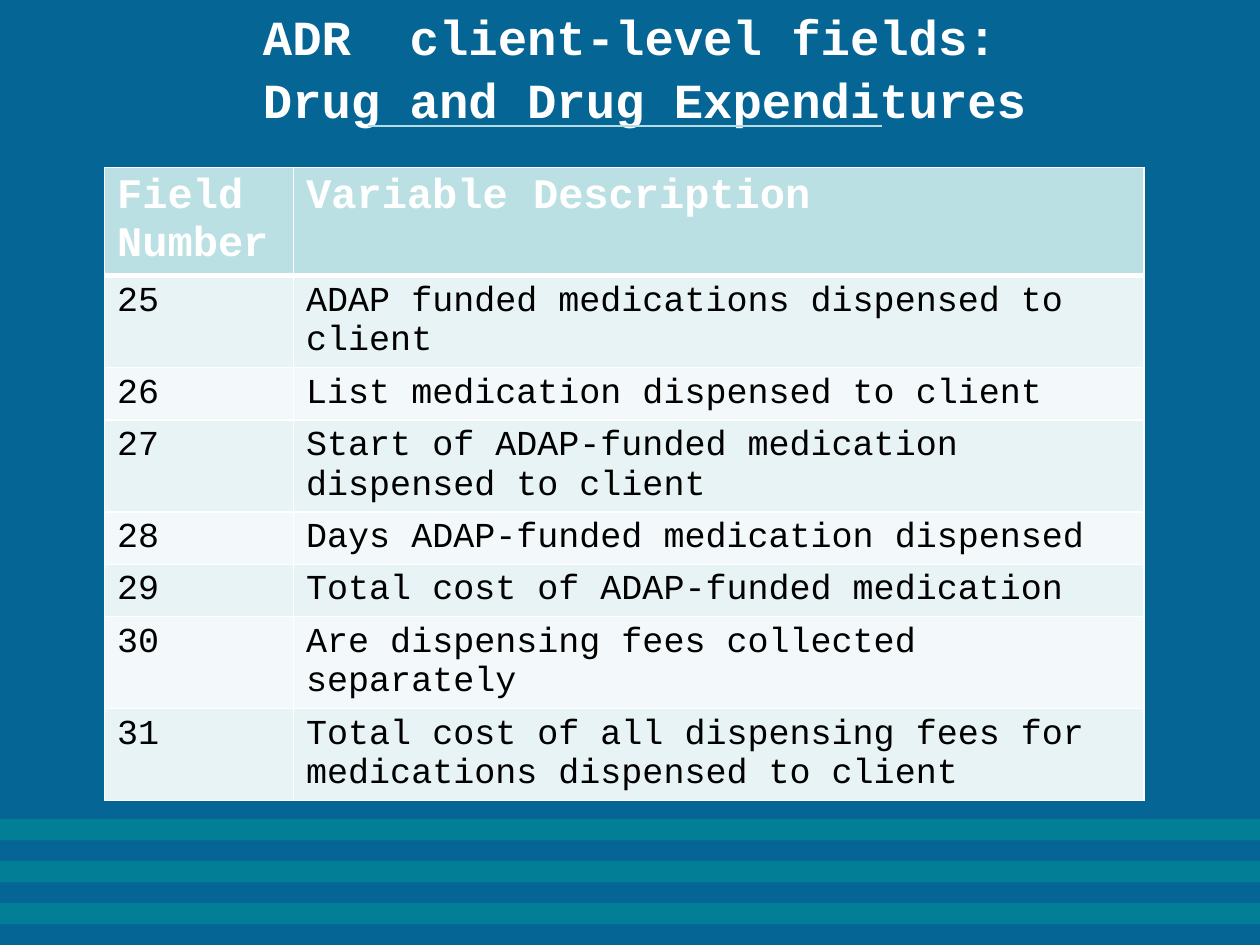
from dataclasses import dataclass

from lxml import etree
from pptx import Presentation
from pptx import util as u
from pptx.dml.color import RGBColor
from pptx.enum import shapes, text
from pptx.oxml import parse_xml
from pptx.oxml.ns import nsdecls, qn


@dataclass(frozen=True)
class Theme:
    font: str = "Courier New"
    background: str = "056594"
    stripe: str = "009999"
    stripe_alpha: int = 49000
    rule: str = "B6DCDF"
    white: str = "FFFFFF"
    black: str = "000000"
    header: str = "BBE0E3"
    bands: tuple = ("E7F3F4", "F3F9FA")
    title_size: int = 28
    header_size: int = 24
    body_size: int = 20


THEME = Theme()
TITLE = "ADR  client-level fields:\v Drug and Drug Expenditures"
HEADINGS = ("Field Number", "Variable Description")
FIRST_FIELD = 25
DESCRIPTIONS = (
    "ADAP funded medications dispensed to client",
    "List medication dispensed to client",
    "Start of ADAP-funded medication dispensed to client",
    "Days ADAP-funded medication dispensed",
    "Total cost of ADAP-funded medication",
    "Are dispensing fees collected separately",
    "Total cost of all dispensing fees for medications dispensed to client",
)


def box(left, top, width, height):
    return [u.Inches(length) for length in (left, top, width, height)]


def apply_format(target, values):
    for name, value in values.items():
        setattr(target, name, value)


def style_font(font, size, color, bold):
    apply_format(font, {"name": THEME.font, "size": u.Pt(size), "bold": bold})
    font.color.rgb = RGBColor.from_string(color)


def paint(fill, color):
    fill.solid()
    fill.fore_color.rgb = RGBColor.from_string(color)


def add_stripe(slide, top):
    stripe = slide.shapes.add_shape(
        shapes.MSO_SHAPE.RECTANGLE, *box(0, top, 10, 0.17))
    stripe.shadow.inherit = False
    stripe.line.fill.background()
    paint(stripe.fill, THEME.stripe)
    color = stripe.fill._xPr.find(".//" + qn("a:srgbClr"))
    etree.SubElement(color, qn("a:alpha"), val=str(THEME.stripe_alpha))


def set_title(slide):
    title = slide.shapes.title
    places = ("left", "top", "width", "height")
    apply_format(title, dict(zip(places, box(0.5, 0.17, 9, 0.7))))
    frame = title.text_frame
    frame.text = TITLE
    apply_format(frame, {
        "word_wrap": True,
        "auto_size": text.MSO_AUTO_SIZE.NONE,
        "vertical_anchor": text.MSO_ANCHOR.MIDDLE,
    })
    heading = frame.paragraphs[0]
    apply_format(heading, {"alignment": text.PP_ALIGN.CENTER, "line_spacing": 1.06})
    for run in heading.runs:
        style_font(run.font, THEME.title_size, THEME.white, True)


def add_rule(slide):
    rule = slide.shapes.add_connector(
        shapes.MSO_CONNECTOR.STRAIGHT, *box(7, 1, 2.92, 1))
    rule.line.color.rgb = RGBColor.from_string(THEME.rule)
    rule.line.width = u.Pt(0.75)
    etree.SubElement(rule._element.spPr, qn("a:effectLst"))


def set_borders(cell, top, bottom):
    properties = cell._tc.get_or_add_tcPr()
    sides = {"lnL": 1, "lnR": 1, "lnT": top, "lnB": bottom}
    for position, (side, points) in enumerate(sides.items()):
        properties.insert(position, parse_xml(
            f'<a:{side} {nsdecls("a")} w="{u.Pt(points)}"><a:solidFill>'
            f'<a:srgbClr val="{THEME.white}"/></a:solidFill></a:{side}>'))


def fill_cell(cell, words, row):
    is_header = row == 0
    cell.text = words
    paint(cell.fill, THEME.header if is_header else THEME.bands[(row - 1) % 2])
    set_borders(cell, 3 if row == 1 else 1, 3 if is_header else 1)
    look = ((THEME.header_size, THEME.white, True) if is_header
            else (THEME.body_size, THEME.black, False))
    style_font(cell.text_frame.paragraphs[0].runs[0].font, *look)


def add_field_table(slide):
    fields = [(str(number), description)
              for number, description in enumerate(DESCRIPTIONS, FIRST_FIELD)]
    rows = [HEADINGS, *fields]
    table = slide.shapes.add_table(
        len(rows), len(HEADINGS), *box(0.83, 1.33, 8.25, 3.44)).table
    for column, width in zip(table.columns, (1.5, 6.75)):
        column.width = u.Inches(width)
    for index, row in enumerate(rows):
        table.rows[index].height = u.Inches(0.41 if index else 0.57)
        for column, words in enumerate(row):
            fill_cell(table.cell(index, column), words, index)


def main():
    deck = Presentation()
    apply_format(deck, {"slide_width": u.Inches(10), "slide_height": u.Inches(7.5)})
    slide = deck.slides.add_slide(deck.slide_layouts[5])
    paint(slide.background.fill, THEME.background)
    for step in range(3):
        add_stripe(slide, 6.5 + step / 3)
    set_title(slide)
    add_rule(slide)
    add_field_table(slide)
    deck.save("out.pptx")


if __name__ == "__main__":
    main()
